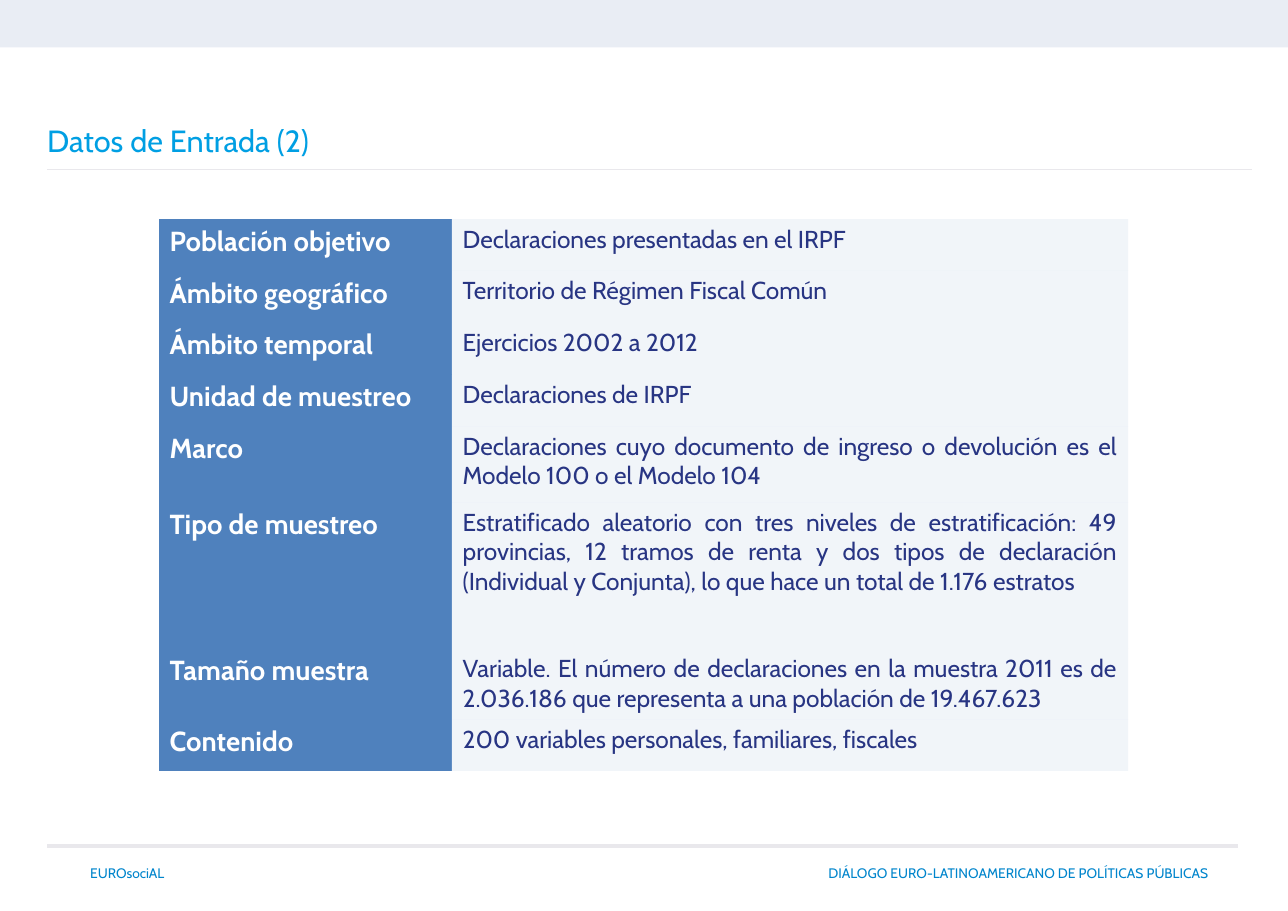
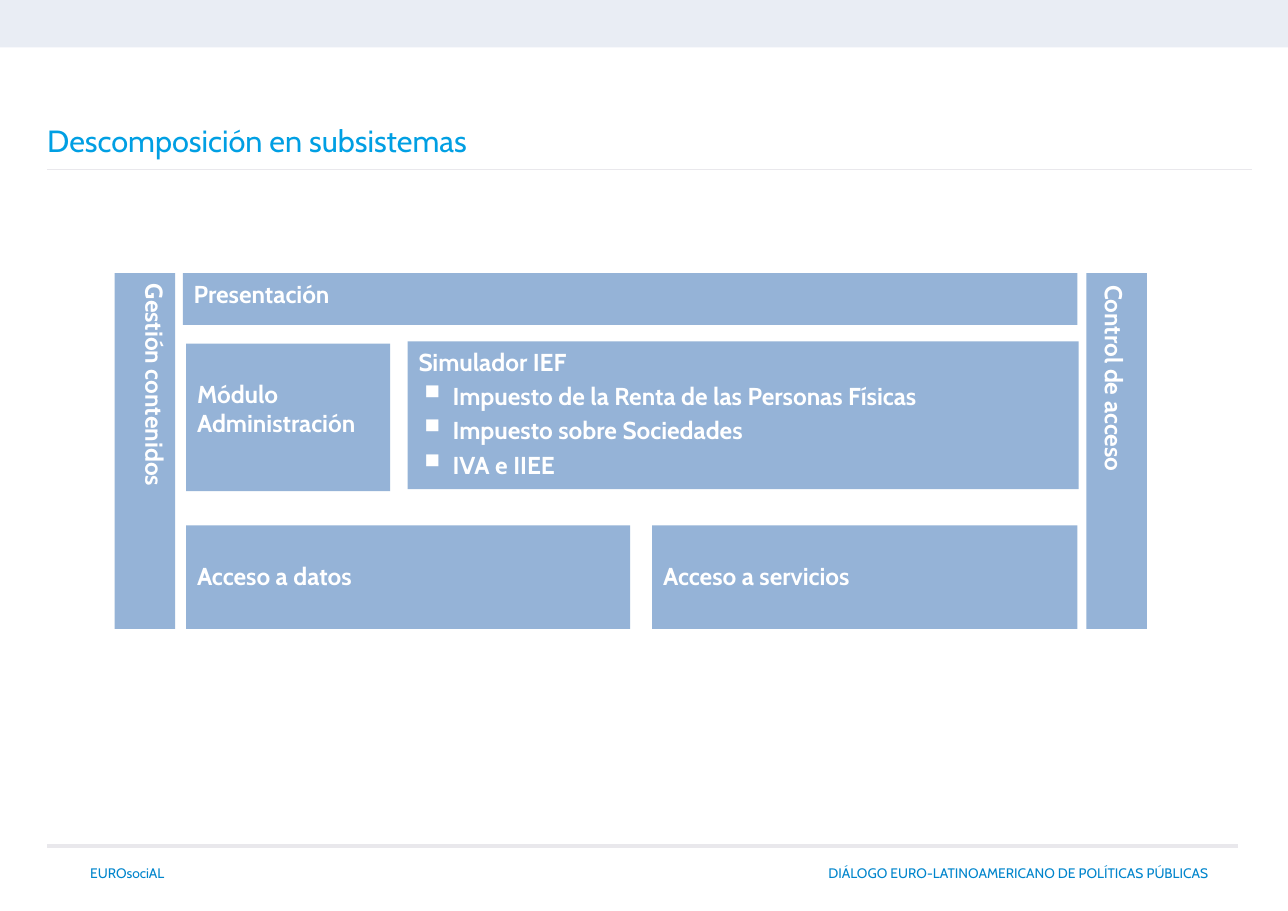
"""Build two slides on the tax sample data and the subsystems of the simulator."""
from dataclasses import dataclass

from lxml import etree
from pptx import Presentation
from pptx.dml.color import RGBColor
from pptx.enum import shapes, text
from pptx.oxml import ns
from pptx.util import Inches, Pt


@dataclass(frozen=True)
class Theme:
    """Colours, type sizes and font shared by the slides."""
    font: str = "Cabin"
    band: str = "E9EDF4"
    rule: str = "E9E8EC"
    title: str = "009FE3"
    footer: str = "0085CC"
    header_cell: str = "4F81BD"
    value_cell: str = "DCE6F2"
    value_text: str = "283583"
    block: str = "95B3D7"
    white: str = "FFFFFF"
    title_size: int = 20
    header_size: int = 18
    body_size: int = 16
    footer_size: int = 9


THEME = Theme()
NO_GRID_STYLE = "{2D5ABB26-0587-4C30-8999-92F81FD0307C}"
LEFT, JUSTIFY, RIGHT = text.PP_ALIGN.LEFT, text.PP_ALIGN.JUSTIFY, text.PP_ALIGN.RIGHT

SAMPLE_ROWS = [
    (0.47, "Población objetivo", "Declaraciones presentadas en el IRPF"),
    (0.47, "Ámbito geográfico", "Territorio de Régimen Fiscal Común"),
    (0.47, "Ámbito temporal", "Ejercicios 2002 a 2012"),
    (0.47, "Unidad de muestreo", "Declaraciones de IRPF"),
    (0.69, "Marco", "Declaraciones cuyo documento de ingreso o devolución es el "
                    "Modelo 100 o el Modelo 104"),
    (1.33, "Tipo de muestreo", "Estratificado aleatorio con tres niveles de estratificación: "
                               "49 provincias, 12 tramos de renta y dos tipos de declaración "
                               "(Individual y Conjunta), lo que hace un total de 1.176 estratos"),
    (0.64, "Tamaño muestra", "Variable. El número de declaraciones en la muestra 2011 es de "
                             "2.036.186 que representa a una población de 19.467.623"),
    (0.47, "Contenido", "200 variables personales, familiares, fiscales"),
]
TAXES = ["Impuesto de la Renta de las Personas Físicas", "Impuesto sobre Sociedades", "IVA e IIEE"]


def color(value):
    """Turn a hex string into a colour."""
    return RGBColor.from_string(value)


def style_paragraph(paragraph, size, ink, bold=False, align=LEFT):
    """Set alignment and font of a paragraph."""
    paragraph.alignment = align
    font = paragraph.font
    font.name, font.size, font.bold = THEME.font, Pt(size), bold
    font.color.rgb = color(ink)


def add_text(slide, box, content, size, ink, align=LEFT):
    """Add a wrapped one-paragraph text box."""
    frame = slide.shapes.add_textbox(*map(Inches, box)).text_frame
    frame.word_wrap = True
    frame.text = content
    style_paragraph(frame.paragraphs[0], size, ink, align=align)


def add_rectangle(slide, box, fill):
    """Add a flat rectangle without outline."""
    shape = slide.shapes.add_shape(shapes.MSO_SHAPE.RECTANGLE, *map(Inches, box))
    shape.shadow.inherit = False
    shape.fill.solid()
    shape.fill.fore_color.rgb = color(fill)
    shape.line.fill.background()
    return shape


def add_rule(slide, left, right, top, width):
    """Add a horizontal grey rule."""
    line = slide.shapes.add_connector(shapes.MSO_CONNECTOR.STRAIGHT, Inches(left), Inches(top),
                                      Inches(right), Inches(top))
    line.line.color.rgb = color(THEME.rule)
    line.line.width = Pt(width)
    etree.SubElement(line._element.spPr, ns.qn("a:effectLst"))


def add_slide(presentation, title):
    """Add a slide with the shared band, title and footer."""
    slide = presentation.slides.add_slide(presentation.slide_layouts[6])
    add_rectangle(slide, (0, 0, 11.69, 0.43), THEME.band)
    add_rule(slide, 0.43, 11.24, 7.68, 2)
    add_text(slide, (0.33, 7.8, 1.26, 0.25), "EUROsociAL", THEME.footer_size, THEME.footer, RIGHT)
    add_text(slide, (7.42, 7.8, 4.02, 0.25), "DIÁLOGO EURO-LATINOAMERICANO DE POLÍTICAS PÚBLICAS",
             THEME.footer_size, THEME.footer)
    add_text(slide, (0.33, 1.06, 10.52, 0.5), title, THEME.title_size, THEME.title)
    add_rule(slide, 0.43, 11.36, 1.54, 1)
    return slide


def fill_cell(cell, content, size, ink, fill, bold=False, opacity=100):
    """Write a justified table cell on a fill of the given opacity."""
    cell.text = content
    style_paragraph(cell.text_frame.paragraphs[0], size, ink, bold, JUSTIFY)
    cell.fill.solid()
    cell.fill.fore_color.rgb = color(fill)
    if opacity < 100:
        tint = cell._tc.tcPr.find(".//" + ns.qn("a:srgbClr"))
        etree.SubElement(tint, ns.qn("a:alpha"), val=str(opacity * 1000))


def add_sample_table(slide, left, top, widths, rows):
    """Add the table of sample features."""
    height = sum(row[0] for row in rows)
    box = map(Inches, (left, top, sum(widths), height))
    table = slide.shapes.add_table(len(rows), len(widths), *box).table
    table.first_row = table.horz_banding = False
    table._tbl.tblPr.find(ns.qn("a:tableStyleId")).text = NO_GRID_STYLE
    for column, width in zip(table.columns, widths):
        column.width = Inches(width)
    for row, (row_height, feature, value) in zip(table.rows, rows):
        row.height = Inches(row_height)
        fill_cell(row.cells[0], feature, THEME.header_size, THEME.white, THEME.header_cell, True)
        fill_cell(row.cells[1], value, THEME.body_size, THEME.value_text, THEME.value_cell,
                  opacity=40)


def add_bullet(paragraph):
    """Give a paragraph a white square bullet with a hanging indent."""
    paragraph.level = 3
    paragraph.space_before = Pt(3.2)
    properties = paragraph._p.get_or_add_pPr()
    properties.set("marL", str(Inches(0.31)))
    properties.set("indent", str(-Inches(0.31)))
    bullet_color = etree.SubElement(properties, ns.qn("a:buClr"))
    etree.SubElement(bullet_color, ns.qn("a:srgbClr"), val=THEME.white)
    etree.SubElement(properties, ns.qn("a:buSzPct"), val="150000")
    etree.SubElement(properties, ns.qn("a:buChar"), char="▪")


def add_block(slide, box, label, bullets=(), top=0.05, right=0.1, vertical=False):
    """Add a subsystem block with a label and optional bullets."""
    frame = add_rectangle(slide, box, THEME.block).text_frame
    frame.word_wrap = True
    frame.vertical_anchor = text.MSO_ANCHOR.TOP
    frame.margin_top, frame.margin_right = Inches(top), Inches(right)
    if vertical:
        frame._txBody.bodyPr.set("vert", "vert")
    frame.text = "\n".join([label, *bullets])
    for index, paragraph in enumerate(frame.paragraphs):
        if index:
            add_bullet(paragraph)
        style_paragraph(paragraph, THEME.body_size, THEME.white, True,
                        JUSTIFY if bullets else LEFT)


def add_subsystems(slide):
    """Draw the blocks of the subsystem diagram."""
    lowered = 0.32
    add_block(slide, (1.69, 3.12, 1.85, 1.34), "Módulo Administración", top=lowered)
    add_block(slide, (3.7, 3.1, 6.09, 1.34), "Simulador IEF", TAXES)
    add_block(slide, (1.66, 2.48, 8.12, 0.47), "Presentación")
    add_block(slide, (1.69, 4.77, 4.03, 0.94), "Acceso a datos", top=lowered)
    add_block(slide, (5.92, 4.77, 3.86, 0.94), "Acceso a servicios", top=lowered)
    add_block(slide, (9.86, 2.48, 0.55, 3.23), "Control de acceso", top=0.11, right=0.16,
              vertical=True)
    add_block(slide, (1.04, 2.48, 0.55, 3.23), "Gestión contenidos", vertical=True)


def main():
    """Build and save the presentation."""
    presentation = Presentation()
    presentation.slide_width, presentation.slide_height = Inches(11.69), Inches(8.27)
    add_sample_table(add_slide(presentation, "Datos de Entrada (2)"), 1.44, 1.99, (2.66, 6.14),
                     SAMPLE_ROWS)
    add_subsystems(add_slide(presentation, "Descomposición en subsistemas"))
    presentation.save("out.pptx")


if __name__ == "__main__":
    main()
